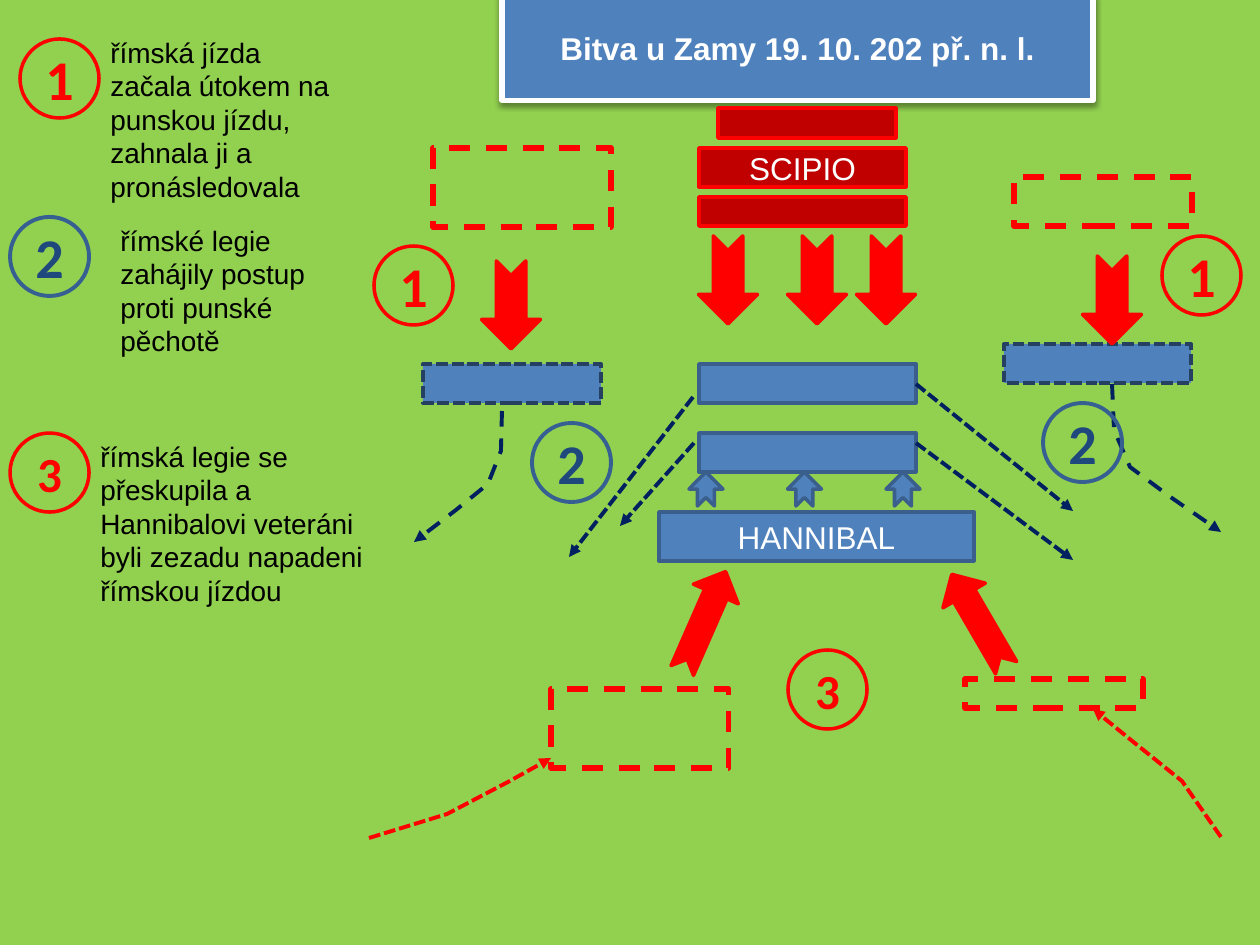
from lxml import etree
from pptx import Presentation, util as u
from pptx.dml.color import RGBColor
from pptx.enum import dml, shapes, text
from pptx.oxml import parse_xml
from pptx.oxml.ns import nsdecls, qn

SCALE = 914400 / 126
GREEN = RGBColor(0x92, 0xD0, 0x50)
RED = RGBColor(0xFF, 0x00, 0x00)
DARK = RGBColor(0xC0, 0x00, 0x00)
BLUE = RGBColor(0x4F, 0x81, 0xBD)
EDGE = RGBColor(0x3A, 0x5F, 0x8C)
RING = RGBColor(0x37, 0x60, 0x92)
DEEP = RGBColor(0x25, 0x40, 0x61)
INK = RGBColor(0x1F, 0x49, 0x7D)
NAVY = RGBColor(0x00, 0x20, 0x60)
WHITE = RGBColor(0xFF, 0xFF, 0xFF)
BLACK = RGBColor(0x00, 0x00, 0x00)
KIND = shapes.MSO_SHAPE
DASH = dml.MSO_LINE.DASH
SHORT = dml.MSO_LINE.SQUARE_DOT


def px(*nums):
    return [u.Emu(round(n * SCALE)) for n in nums]


def write(frame, words, size=18, font="Arial", color=WHITE, bold=False,
          align=text.PP_ALIGN.CENTER, anchor=text.MSO_ANCHOR.MIDDLE):
    frame.word_wrap = True
    frame.vertical_anchor = anchor
    par = frame.paragraphs[0]
    par.alignment = align
    run = par.add_run()
    run.text = words
    run.font.size = u.Pt(size)
    run.font.name = font
    run.font.bold = bold
    run.font.color.rgb = color


def paint(shape, fill, line, width, dash=None):
    if fill is None:
        shape.fill.background()
    else:
        shape.fill.solid()
        shape.fill.fore_color.rgb = fill
    shape.line.color.rgb = line
    shape.line.width = u.Pt(width)
    if dash is not None:
        shape.line.dash_style = dash


def draw(slide, kind, box, fill, line, width=2, dash=None):
    shape = slide.shapes.add_shape(kind, *px(*box))
    shape.shadow.inherit = False
    paint(shape, fill, line, width, dash)
    return shape


def block(slide, box, fill, line, width=2, dash=None, words=None):
    shape = draw(slide, KIND.RECTANGLE, box, fill, line, width, dash)
    if words:
        write(shape.text_frame, words)


def badge(slide, x, y, num):
    line, ink, width, size = {
        1: (RED, RED, 2, 32),
        2: (RING, INK, 2.25, 32),
        3: (RED, RED, 2, 28),
    }[num]
    shape = draw(slide, KIND.OVAL, (x, y, 79, 79), None, line, width)
    write(shape.text_frame, str(num), size=size, font="Calibri",
          color=ink, bold=True)


def arrow(slide, mid, size, turn, fill=RED, line=RED):
    box = (mid[0] - size[0] / 2, mid[1] - size[1] / 2, *size)
    draw(slide, KIND.NOTCHED_RIGHT_ARROW, box, fill, line).rotation = turn


def tip(shape):
    line = shape._element.spPr.find(qn("a:ln"))
    etree.SubElement(line, qn("a:tailEnd"), type="triangle")


def route(slide, points, color, dash):
    path = slide.shapes.build_freeform(*points[0], scale=SCALE)
    path.add_line_segments(points[1:], close=False)
    shape = path.convert_to_shape()
    shape.shadow.inherit = False
    paint(shape, None, color, 2.25, dash)
    tip(shape)


def march(slide, start, end):
    line = slide.shapes.add_connector(
        shapes.MSO_CONNECTOR.STRAIGHT, *px(*start, *end))
    line.line.color.rgb = NAVY
    line.line.width = u.Pt(2.25)
    line.line.dash_style = SHORT
    etree.SubElement(line._element.spPr, qn("a:effectLst"))
    tip(line)


def note(slide, box, words):
    frame = slide.shapes.add_textbox(*px(*box)).text_frame
    write(frame, words, size=16, color=BLACK, align=text.PP_ALIGN.LEFT,
          anchor=text.MSO_ANCHOR.TOP)
    frame.auto_size = text.MSO_AUTO_SIZE.SHAPE_TO_FIT_TEXT


def head(slide, box, words):
    shape = slide.shapes.title
    shape.left, shape.top, shape.width, shape.height = px(*box)
    paint(shape, BLUE, WHITE, 3)
    write(shape.text_frame, words, bold=True)
    shape.text_frame.auto_size = text.MSO_AUTO_SIZE.SHAPE_TO_FIT_TEXT
    shape._element.spPr.append(parse_xml(
        f'<a:effectLst {nsdecls("a")}><a:outerShdw blurRad="39400" '
        'dist="20300" dir="5400000" rotWithShape="0"><a:srgbClr val="000000">'
        '<a:alpha val="38000"/></a:srgbClr></a:outerShdw></a:effectLst>'))


def main():
    deck = Presentation()
    deck.slide_width, deck.slide_height = px(1260, 945)
    slide = deck.slides.add_slide(deck.slide_layouts[5])
    slide.background.fill.solid()
    slide.background.fill.fore_color.rgb = GREEN
    head(slide, (502, 20, 591, 56), "Bitva u Zamy 19. 10. 202 př. n. l.")

    for box in ((551, 689, 178, 79), (1014, 177, 178, 49),
                (433, 148, 178, 79), (965, 679, 178, 29)):
        block(slide, box, None, RED, 3, DASH)
    for box, words in (((718, 108, 178, 30), None),
                       ((699, 148, 207, 39), "SCIPIO"),
                       ((699, 197, 207, 29), None)):
        block(slide, box, DARK, RED, words=words)
    for box in ((423, 364, 178, 39), (1004, 344, 187, 39)):
        block(slide, box, BLUE, DEEP, 2.25, SHORT)
    for box, words in (((699, 364, 217, 39), None),
                       ((699, 433, 217, 39), None),
                       ((659, 512, 315, 49), "HANNIBAL")):
        block(slide, box, BLUE, EDGE, words=words)

    for mid in ((511, 305), (728, 280), (817, 280), (886, 280), (1112, 300)):
        arrow(slide, mid, (88, 59), 90)
    for col in range(3):
        arrow(slide, (706 + 98.5 * col, 489), (34, 34), 270, BLUE, EDGE)
    arrow(slide, (704, 621), (108, 49), 293.7)
    arrow(slide, (979, 621), (108, 49), 239.8)

    for start, end in (((693, 397), (569, 557)), ((694, 443), (620, 526)),
                       ((916, 384), (1073, 511)), ((916, 443), (1073, 560))):
        march(slide, start, end)
    route(slide, [(502, 411), (501, 451), (488, 484), (456, 510), (414, 542)],
          NAVY, DASH)
    route(slide, [(1112, 384), (1114, 430), (1130, 467), (1169, 496),
                  (1221, 532)], NAVY, DASH)
    route(slide, [(369, 838), (447, 814), (508, 782), (551, 758)], RED, SHORT)
    route(slide, [(1221, 837), (1182, 781), (1131, 740), (1093, 709)],
          RED, SHORT)

    for x, y, num in ((374, 246, 1), (1162, 236, 1), (532, 423, 2),
                      (1043, 403, 2), (788, 650, 3), (20, 39, 1),
                      (10, 217, 2), (10, 433, 3)):
        badge(slide, x, y, num)
    note(slide, (98, 29, 256, 181),
         "římská jízda začala útokem na punskou jízdu, zahnala ji a "
         "pronásledovala")
    note(slide, (108, 217, 246, 147),
         "římské legie zahájily postup proti punské pěchotě")
    note(slide, (88, 433, 315, 181),
         "římská legie se přeskupila a Hannibalovi veteráni byli zezadu "
         "napadeni římskou jízdou")
    deck.save("out.pptx")


if __name__ == "__main__":
    main()
